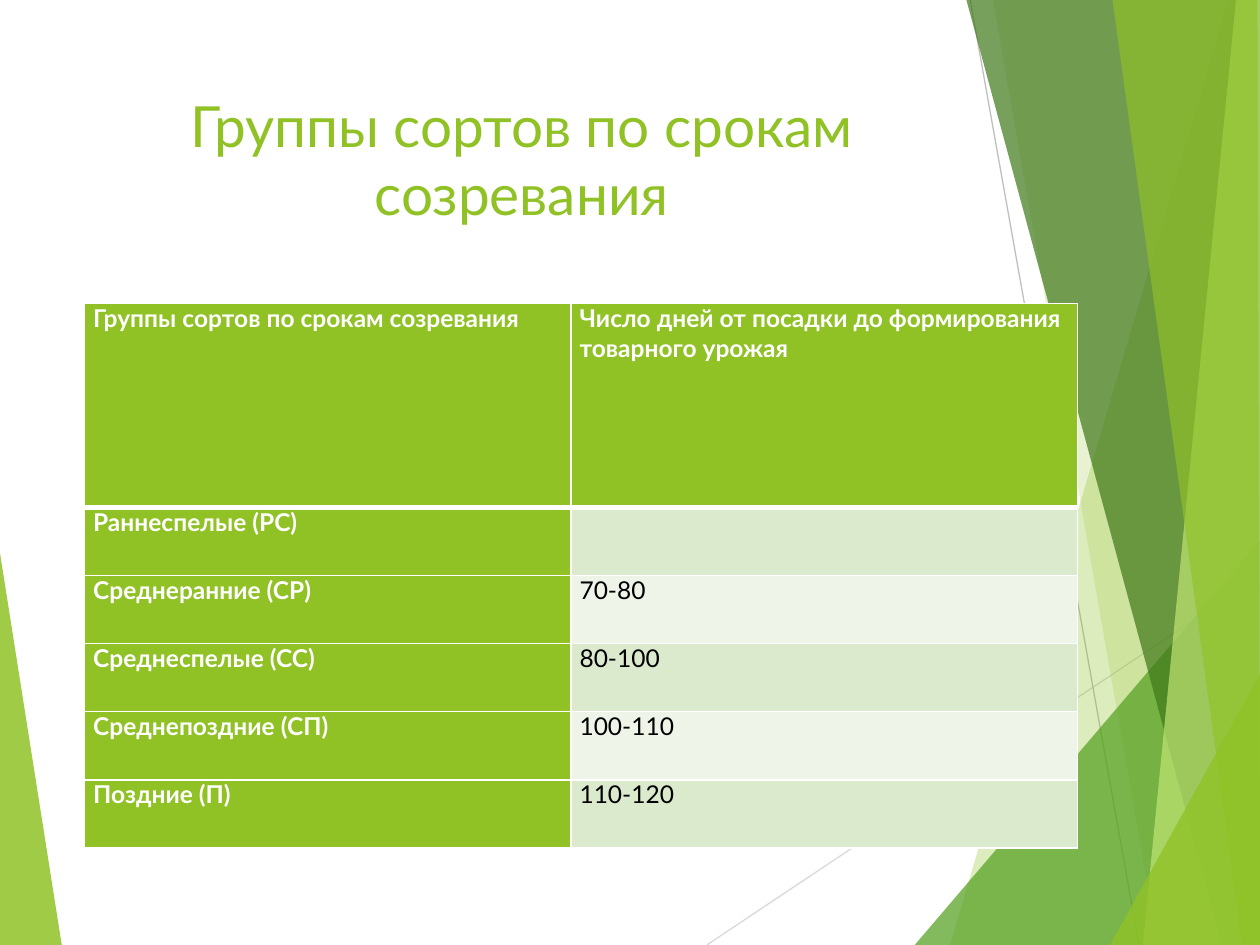
import pptx
import pptx.dml.color
import pptx.enum.shapes
import pptx.enum.text
import pptx.oxml
import pptx.oxml.ns
import pptx.oxml.xmlchemy
import pptx.util
from pptx.util import Inches

GREEN = "90C226"
WHITE = "FFFFFF"
FONT = "Lato"


def color(value):
    return pptx.dml.color.RGBColor.from_string(value)


def add_span(para, text, size, hue, bold=False):
    span = para.add_run()
    span.text = text
    span.font.name = FONT
    span.font.size = pptx.util.Pt(size)
    span.font.bold = bold
    span.font.color.rgb = color(hue)


deck = pptx.Presentation()
deck.slide_width, deck.slide_height = Inches(10), Inches(7.5)
page = deck.slides.add_slide(deck.slide_layouts[5])

# Thin lines behind the facets
for x1, y1, x2, y2, hue in [
    (5.61, 7.5, 10, 4.57, "D9D9D9"),
    (7.7, 0, 9.04, 7.5, "BFBFBF"),
]:
    line = page.shapes.add_connector(
        pptx.enum.shapes.MSO_CONNECTOR.STRAIGHT,
        Inches(x1), Inches(y1), Inches(x2), Inches(y2))
    line.line.color.rgb = color(hue)
    line.line.width = pptx.util.Pt(0.75)
    line._element.spPr.append(pptx.oxml.xmlchemy.OxmlElement("a:effectLst"))

# Translucent facets: corner points, fill, opacity in percent
facets = [
    ([(0, 4.39), (0.49, 7.5), (0, 7.5)], GREEN, 85),
    ([(9.75, 0), (7.54, 7.5), (10, 7.5), (10, 0)], GREEN, 30),
    ([(7.88, 0), (9.19, 7.5), (10, 7.5), (10, 0)], GREEN, 20),
    ([(7.26, 7.5), (10, 4.29), (10, 7.5)], "54A021", 72),
    ([(7.67, 0), (9.7, 7.5), (10, 7.5), (10, 0)], "3F7819", 70),
    ([(9.81, 0), (9.07, 7.5), (10, 7.5), (10, 0)], "C0E474", 70),
    ([(8.83, 0), (9.86, 7.5), (10, 7.5), (9.98, 0)], GREEN, 65),
    ([(8.81, 7.5), (10, 5.35), (10, 7.5)], GREEN, 80),
]
for corners, hue, opacity in facets:
    points = [(Inches(x), Inches(y)) for x, y in corners]
    builder = page.shapes.build_freeform(*points[0])
    builder.add_line_segments(points[1:], close=True)
    facet = builder.convert_to_shape()
    facet.shadow.inherit = False
    facet.line.fill.background()
    facet.fill.solid()
    facet.fill.fore_color.rgb = color(hue)
    alpha = pptx.oxml.xmlchemy.OxmlElement("a:alpha")
    alpha.set("val", str(opacity * 1000))
    facet._element.spPr.find(".//" + pptx.oxml.ns.qn("a:srgbClr")).append(alpha)

# Title
title = page.shapes.title
title.left, title.top = Inches(0.67), Inches(0.67)
title.width, title.height = Inches(6.94), Inches(1.35)
frame = title.text_frame
frame.word_wrap = True
frame.auto_size = pptx.enum.text.MSO_AUTO_SIZE.NONE
frame.vertical_anchor = pptx.enum.text.MSO_ANCHOR.TOP
frame.paragraphs[0].alignment = pptx.enum.text.PP_ALIGN.CENTER
add_span(frame.paragraphs[0], "Группы cортов по срокам созревания", 32.4, GREEN)

# Table of ripening groups
rows = [
    ("Группы cортов по срокам созревания",
     "Число дней от посадки до формирования товарного урожая"),
    ("Раннеспелые (РС)", ""),
    ("Среднеранние (СР)", "70-80"),
    ("Среднеспелые (СС)", "80-100"),
    ("Среднепоздние (СП)", "100-110"),
    ("Поздние (П)", "110-120"),
]
table = page.shapes.add_table(
    len(rows), 2, Inches(0.67), Inches(2.41), Inches(7.88), Inches(4.32)).table
table.columns[0].width, table.columns[1].width = Inches(3.86), Inches(4.02)
for r, texts in enumerate(rows):
    table.rows[r].height = Inches(0.54 if r else 1.62)
    for c, text in enumerate(texts):
        cell = table.cell(r, c)
        cell.margin_left = cell.margin_right = Inches(0.07)
        cell.margin_top = cell.margin_bottom = 0
        heading = r == 0 or c == 0
        band = "DBE9CD" if r % 2 else "EEF4E8"
        cell.fill.solid()
        cell.fill.fore_color.rgb = color(GREEN if heading else band)
        if text:
            add_span(cell.text_frame.paragraphs[0], text, 14,
                     WHITE if heading else "000000", heading)

        # White borders, heavier around the header's lower edge
        for i, side in enumerate(("lnL", "lnR", "lnT", "lnB")):
            heavy = (r == 0 and side == "lnB") or (r == 1 and side == "lnT")
            border = pptx.oxml.parse_xml(
                f'<a:{side} {pptx.oxml.ns.nsdecls("a")} w="{38100 if heavy else 12700}">'
                f'<a:solidFill><a:srgbClr val="{WHITE}"/></a:solidFill></a:{side}>')
            cell._tc.get_or_add_tcPr().insert(i, border)

deck.save("out.pptx")
